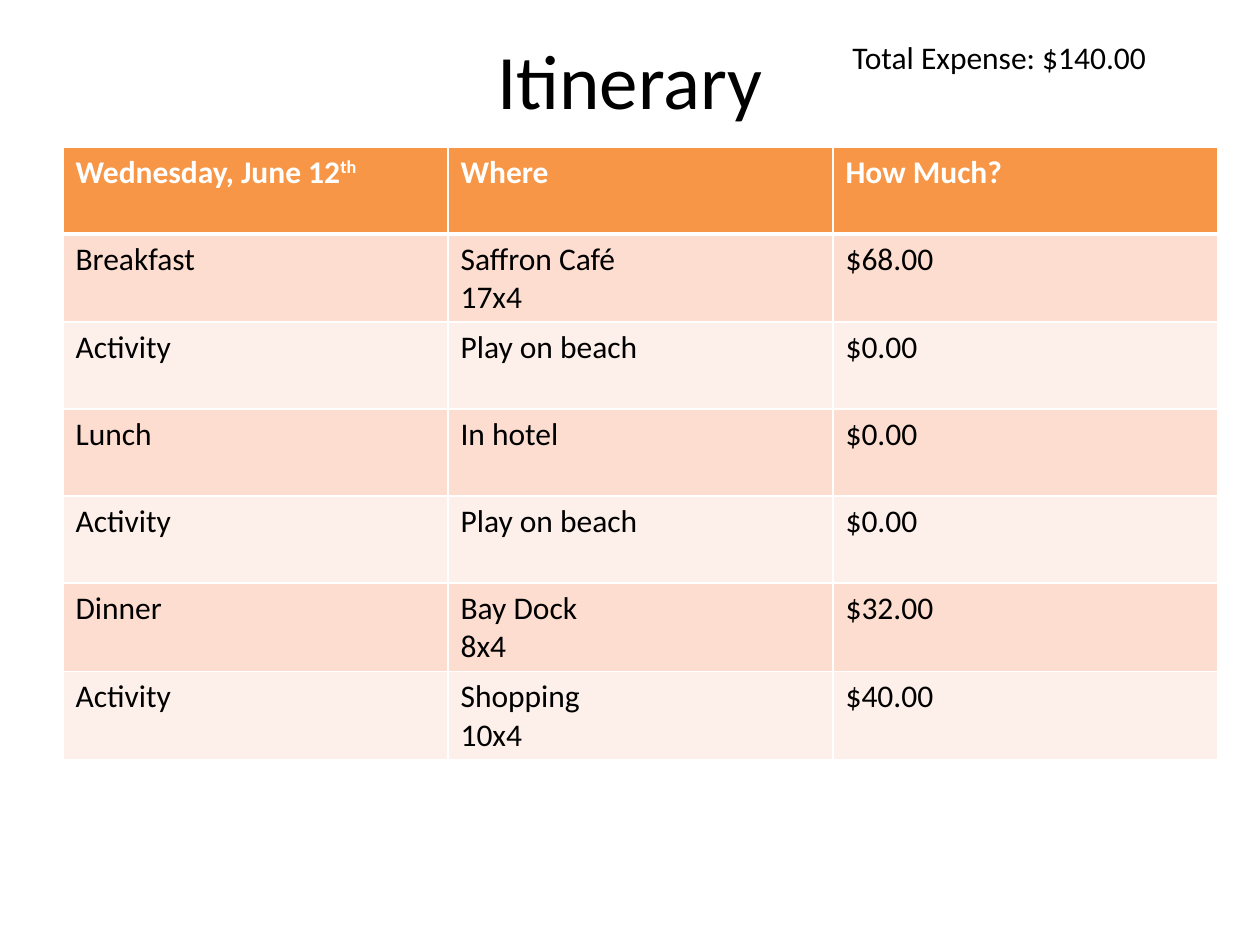
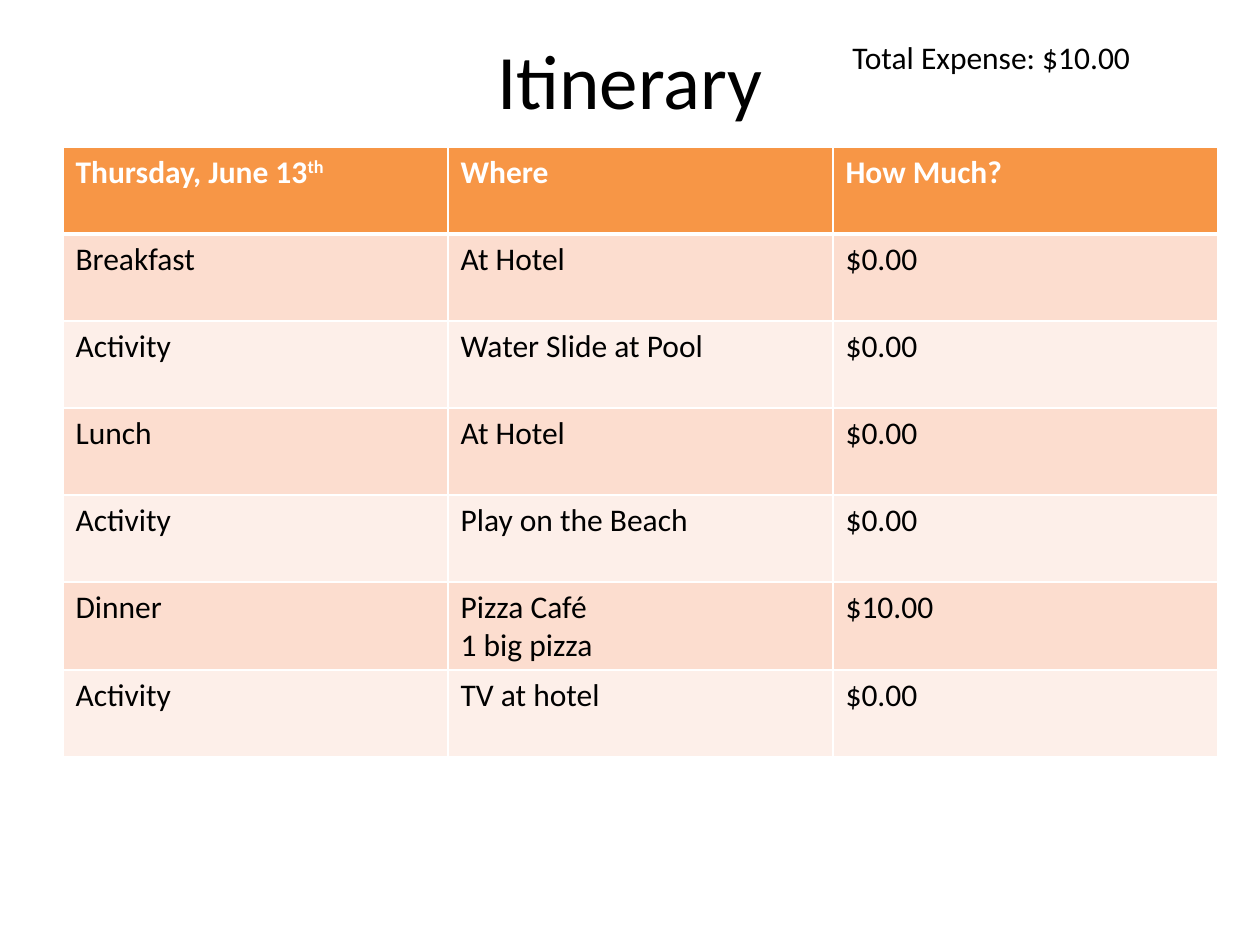
from dataclasses import dataclass

from lxml.etree import SubElement
from pptx import Presentation
from pptx.dml.color import RGBColor
from pptx.enum.text import MSO_ANCHOR as Anchor
from pptx.enum.text import MSO_AUTO_SIZE as AutoSize
from pptx.enum.text import PP_ALIGN as Align
from pptx.oxml.ns import qn
from pptx.util import Emu, Pt

PX = 914400 / 126
SLIDE_SIZE = (1260, 945)
TITLE_BOX = (63, 0, 1134, 157)
TOTAL_BOX = (840, 32, 388, 51)
TABLE_ORIGIN = (63, 147)
COLUMN_WIDTH, ROW_HEIGHT = 385, 87
TITLE_ONLY = 5


@dataclass(frozen=True)
class Theme:
    font: str = "Calibri"
    title_size: int = 44
    body_size: int = 18
    text: str = "000000"
    light: str = "FFFFFF"
    header: str = "F79646"
    bands: tuple = ("FCDDCF", "FDEFE9")
    grid: int = 1
    header_rule: int = 3


DAYS = [
    (("Wednesday, June 12", "th"), [
        ("Breakfast", "Saffron Café\n17x4", 68),
        ("Activity", "Play on beach", 0),
        ("Lunch", "In hotel", 0),
        ("Activity", "Play on beach", 0),
        ("Dinner", "Bay Dock\n8x4", 32),
        ("Activity", "Shopping\n10x4", 40),
    ]),
    (("Thursday, June 13", "th"), [
        ("Breakfast", "At Hotel", 0),
        ("Activity", "Water Slide at Pool", 0),
        ("Lunch", "At Hotel", 0),
        ("Activity", "Play on the Beach", 0),
        ("Dinner", "Pizza Café\n1 big pizza", 10),
        ("Activity", "TV at hotel", 0),
    ]),
]


def px(*lengths):
    return [Emu(round(length * PX)) for length in lengths]


def dollars(amount):
    return f"${amount:.2f}"


class ItineraryDeck:
    def __init__(self, theme):
        self.theme = theme
        self.presentation = Presentation()
        self.presentation.slide_width, self.presentation.slide_height = px(*SLIDE_SIZE)
        self.slide = None

    def add_slide(self):
        layout = self.presentation.slide_layouts[TITLE_ONLY]
        self.slide = self.presentation.slides.add_slide(layout)

    def format_run(self, run, color=None, **values):
        values = {"name": self.theme.font, "size": Pt(self.theme.body_size),
                  "bold": False} | values
        for name, value in values.items():
            setattr(run.font, name, value)
        run.font.color.rgb = RGBColor.from_string(color or self.theme.text)

    def set_text(self, frame, text, superscript="", align=Align.LEFT, **values):
        """Fill a frame, one paragraph a line, with an optional raised ending."""
        frame.text = text
        for paragraph in frame.paragraphs:
            paragraph.alignment = align
        if superscript:
            run = frame.paragraphs[-1].add_run()
            run.text = superscript
            run._r.get_or_add_rPr().set("baseline", "30000")
        for paragraph in frame.paragraphs:
            for run in paragraph.runs:
                self.format_run(run, **values)

    def title(self, text):
        shape = self.slide.shapes.title
        shape.left, shape.top, shape.width, shape.height = px(*TITLE_BOX)
        self.set_text(shape.text_frame, text, align=Align.CENTER,
                      size=Pt(self.theme.title_size))
        shape.text_frame.vertical_anchor = Anchor.MIDDLE

    def text_box(self, box, text):
        frame = self.slide.shapes.add_textbox(*px(*box)).text_frame
        frame.word_wrap = True
        frame.auto_size = AutoSize.SHAPE_TO_FIT_TEXT
        self.set_text(frame, text)

    def borders(self, cell, top, bottom):
        properties = cell._tc.get_or_add_tcPr()
        widths = {"L": self.theme.grid, "R": self.theme.grid, "T": top, "B": bottom}
        for side, width in widths.items():
            line = SubElement(properties, qn(f"a:ln{side}"), w=str(Pt(width)))
            fill = SubElement(line, qn("a:solidFill"))
            SubElement(fill, qn("a:srgbClr"), val=self.theme.light)

    def table_row(self, table, index, texts, fill, superscript="", **values):
        """Fill one row; the heavy rule runs between the first two rows."""
        theme = self.theme
        top = theme.header_rule if index == 1 else theme.grid
        bottom = theme.header_rule if index == 0 else theme.grid
        for column, text in enumerate(texts):
            cell = table.cell(index, column)
            self.borders(cell, top, bottom)
            cell.fill.solid()
            cell.fill.fore_color.rgb = RGBColor.from_string(fill)
            self.set_text(cell.text_frame, text, superscript if column == 0 else "",
                          **values)

    def table(self, date, plans):
        theme = self.theme
        day, ordinal = date
        headings = (day, "Where", "How Much?")
        row_count = len(plans) + 1
        size = (COLUMN_WIDTH * len(headings), ROW_HEIGHT * row_count)
        table = self.slide.shapes.add_table(
            row_count, len(headings), *px(*TABLE_ORIGIN, *size)).table
        table.first_row = table.horz_banding = False
        self.table_row(table, 0, headings, theme.header, ordinal,
                       color=theme.light, bold=True)
        for index, (event, place, cost) in enumerate(plans, start=1):
            band = theme.bands[(index - 1) % len(theme.bands)]
            self.table_row(table, index, (event, place, dollars(cost)), band)


def main():
    deck = ItineraryDeck(Theme())
    for date, plans in DAYS:
        deck.add_slide()
        deck.title("Itinerary")
        total = sum(cost for _, _, cost in plans)
        deck.text_box(TOTAL_BOX, f"Total Expense: {dollars(total)}")
        deck.table(date, plans)
    deck.presentation.save("out.pptx")


if __name__ == "__main__":
    main()
